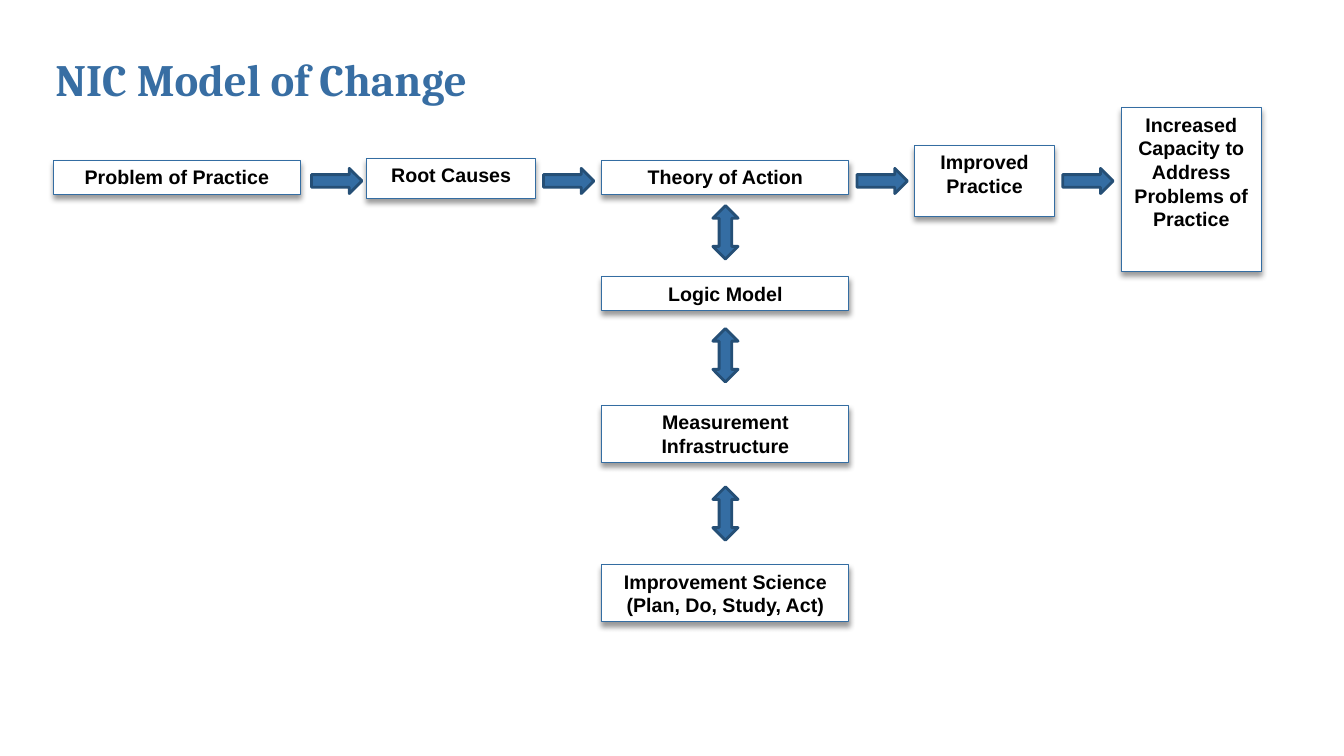
from lxml import etree
from pptx import Presentation
from pptx.dml.color import RGBColor
from pptx.enum.shapes import MSO_SHAPE
from pptx.enum.text import MSO_ANCHOR, PP_ALIGN
from pptx.oxml import parse_xml
from pptx.oxml.ns import qn
from pptx.util import Inches, Pt

RECTANGLE = MSO_SHAPE.RECTANGLE
RIGHT_ARROW = MSO_SHAPE.RIGHT_ARROW
UP_DOWN_ARROW = MSO_SHAPE.UP_DOWN_ARROW
TOP, MIDDLE = MSO_ANCHOR.TOP, MSO_ANCHOR.MIDDLE
CENTER, LEFT = PP_ALIGN.CENTER, PP_ALIGN.LEFT

WHITE, BLACK = "FFFFFF", "000000"
TITLE_BLUE, BOX_LINE = "386EA3", "346DA2"
ARROW_FILL, ARROW_LINE = "346DA3", "254F76"

COLUMN_LEFT, COLUMN_WIDTH = 5.97, 2.45

# Text, left, top, width, height
PROCESS_BOXES = [
    ("Problem of Practice", 0.53, 1.59, COLUMN_WIDTH, 0.34),
    ("Root Causes", 3.64, 1.57, 1.67, 0.4),
    ("Theory of Action", COLUMN_LEFT, 1.59, COLUMN_WIDTH, 0.34),
    ("Improved Practice", 9.07, 1.44, 1.39, 0.71),
    ("Increased Capacity to Address Problems of Practice", 11.12, 1.07, 1.39, 1.62),
]
# Text, top, height
SUPPORT_BOXES = [
    ("Logic Model", 2.74, 0.34),
    ("Measurement Infrastructure", 4.02, 0.57),
    ("Improvement Science (Plan, Do, Study, Act)", 5.6, 0.57),
]
RIGHT_ARROW_LEFTS = [3.09, 5.39, 8.5, 10.54]
UP_DOWN_ARROW_TOPS = [2.04, 3.26, 4.83]


def color(hex_value):
    return RGBColor.from_string(hex_value)


def write_text(shape, text, font_name, size, hex_value, alignment, anchor):
    frame = shape.text_frame
    frame.word_wrap = True
    frame.vertical_anchor = anchor
    paragraph = frame.paragraphs[0]
    paragraph.alignment = alignment
    run = paragraph.add_run()
    run.text = text
    run.font.name = font_name
    run.font.size = Pt(size)
    run.font.bold = True
    run.font.color.rgb = color(hex_value)


def add_drop_shadow(shape):
    effects = shape._element.spPr.find(qn("a:effectLst"))
    shadow = etree.SubElement(
        effects, qn("a:outerShdw"), blurRad=str(Pt(4)), dist=str(Pt(3)),
        dir="5400000", rotWithShape="0")
    shadow_color = etree.SubElement(shadow, qn("a:srgbClr"), val=BLACK)
    etree.SubElement(shadow_color, qn("a:alpha"), val="40000")


def add_filled_shape(slide, kind, left, top, width, height, fill, line, line_width):
    shape = slide.shapes.add_shape(
        kind, Inches(left), Inches(top), Inches(width), Inches(height))
    shape.fill.solid()
    shape.fill.fore_color.rgb = color(fill)
    shape.line.color.rgb = color(line)
    shape.line.width = Pt(line_width)
    shape.shadow.inherit = False
    return shape


def add_box(slide, text, left, top, width, height, anchor):
    box = add_filled_shape(
        slide, RECTANGLE, left, top, width, height, WHITE, BOX_LINE, 0.75)
    add_drop_shadow(box)
    write_text(box, text, "Arial", 14, BLACK, CENTER, anchor)


def add_arrow(slide, kind, left, top, width, height):
    add_filled_shape(
        slide, kind, left, top, width, height, ARROW_FILL, ARROW_LINE, 2)


def add_title(slide, text):
    title = slide.shapes.add_textbox(
        Inches(0.55), Inches(0.51), Inches(10.97), Inches(0.54))
    frame = title.text_frame
    frame.margin_left = frame.margin_right = 0
    frame.margin_top = frame.margin_bottom = 0
    write_text(title, text, "Cambria", 32, TITLE_BLUE, LEFT, MIDDLE)


def main():
    presentation = Presentation()
    presentation.slide_width = Inches(13.33)
    presentation.slide_height = Inches(7.5)
    slide = presentation.slides.add_slide(presentation.slide_layouts[6])

    add_title(slide, "NIC Model of Change")
    for text, left, top, width, height in PROCESS_BOXES:
        add_box(slide, text, left, top, width, height, TOP)
    for text, top, height in SUPPORT_BOXES:
        add_box(slide, text, COLUMN_LEFT, top, COLUMN_WIDTH, height, MIDDLE)
    for left in RIGHT_ARROW_LEFTS:
        add_arrow(slide, RIGHT_ARROW, left, 1.67, 0.5, 0.25)
    for top in UP_DOWN_ARROW_TOPS:
        add_arrow(slide, UP_DOWN_ARROW, 7.07, top, 0.25, 0.53)

    presentation.save("out.pptx")


if __name__ == "__main__":
    main()
